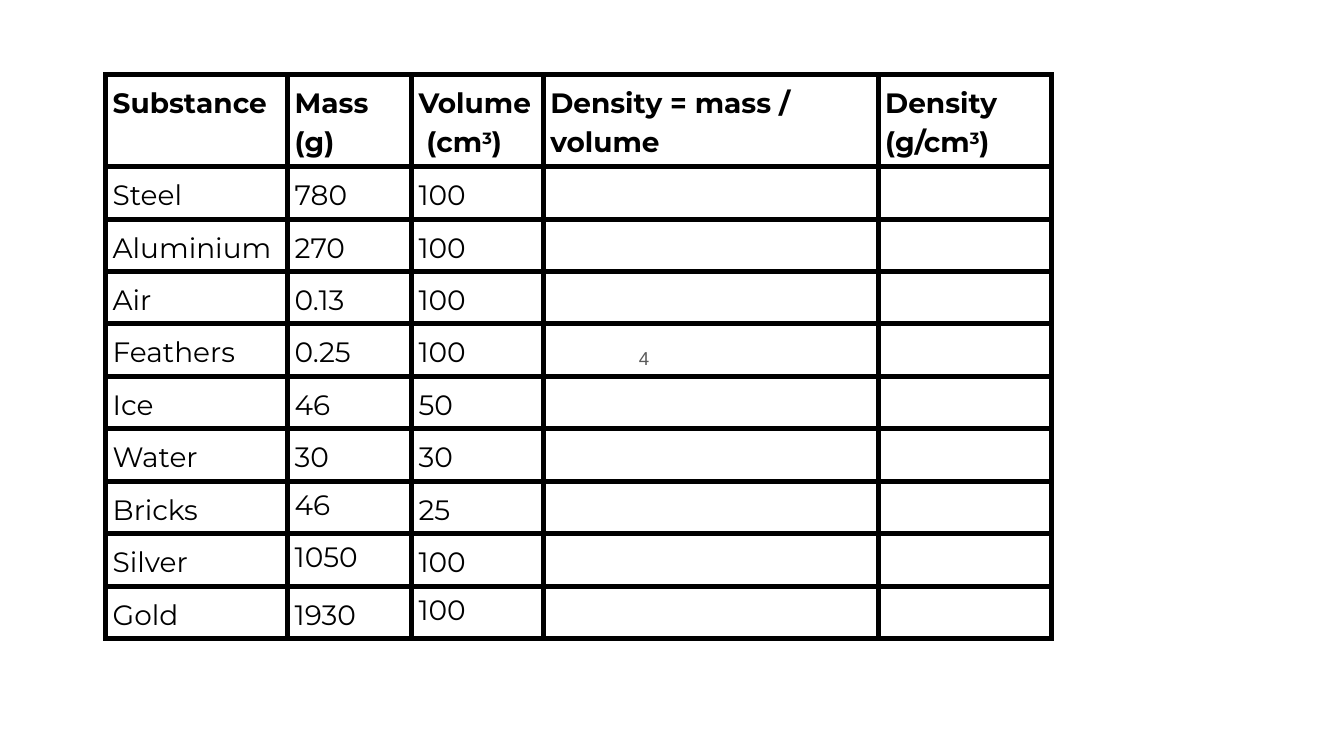
from dataclasses import dataclass

from lxml.etree import SubElement
from pptx import Presentation
from pptx.dml.color import RGBColor
from pptx.enum.text import MSO_ANCHOR, PP_ALIGN
from pptx.oxml.ns import qn
from pptx.util import Cm, Pt


@dataclass(frozen=True)
class Theme:
    """Colours, fonts and type sizes."""
    ink: str = "000000"
    grey: str = "595959"
    face: str = "Montserrat"
    plain: str = "Arial"
    body: int = 15
    small: int = 10
    rule: int = 3
    lead: float = 1.15
    pad: float = 0.13


class Sheet:
    """Holds the theme and the current slide."""

    def __init__(self, theme, slide):
        """Keep the theme and slide."""
        self.theme = theme
        self.slide = slide

    def run(self, para, text, face, size, ink, bold=False, raised=False):
        """Add one styled run."""
        run = para.add_run()
        run.text = text
        font = run.font
        font.name, font.size, font.bold = face, Pt(size), bold
        font.color.rgb = RGBColor.from_string(ink)
        if raised:
            run._r.get_or_add_rPr().set("baseline", "30000")

    def number(self, text, left, top, width, height):
        """Add the slide number."""
        box = self.slide.shapes.add_textbox(Cm(left), Cm(top), Cm(width), Cm(height))
        frame = box.text_frame
        frame.word_wrap = True
        frame.vertical_anchor = MSO_ANCHOR.MIDDLE
        frame.margin_left = frame.margin_right = Cm(0.25)
        frame.margin_top = frame.margin_bottom = Cm(0.25)
        para = frame.paragraphs[0]
        para.alignment = PP_ALIGN.RIGHT
        self.run(para, text, self.theme.plain, self.theme.small, self.theme.grey)

    def border(self, cell):
        """Rule all four sides of a cell."""
        props = cell._tc.get_or_add_tcPr()
        for side in ("a:lnL", "a:lnR", "a:lnT", "a:lnB"):
            line = SubElement(props, qn(side), w=str(Pt(self.theme.rule)))
            fill = SubElement(line, qn("a:solidFill"))
            SubElement(fill, qn("a:srgbClr"), val=self.theme.ink)

    def cell(self, cell, lines, bold, lead):
        """Fill a cell with lines made of text parts."""
        theme = self.theme
        cell.margin_left = cell.margin_right = Cm(theme.pad)
        cell.margin_top = cell.margin_bottom = Cm(theme.pad)
        self.border(cell)
        cell.fill.background()
        frame = cell.text_frame
        for i, parts in enumerate(lines):
            para = frame.add_paragraph() if i else frame.paragraphs[0]
            para.line_spacing = lead
            for j, part in enumerate(parts):
                self.run(para, part, theme.face, theme.body, theme.ink, bold, j == 1)
        if not lines:
            SubElement(frame.paragraphs[0]._p, qn("a:endParaRPr"), sz=str(theme.body * 50))

    def table(self, left, top, widths, heights, rows, tight):
        """Add a ruled table with a bold first row."""
        frame = self.slide.shapes.add_table(
            len(rows), len(widths), Cm(left), Cm(top), Cm(sum(widths)), Cm(sum(heights)))
        table = frame.table
        table.first_row = table.horz_banding = False
        for col, width in zip(table.columns, widths):
            col.width = Cm(width)
        for y, (row, height) in enumerate(zip(rows, heights)):
            table.rows[y].height = Cm(height)
            for x, lines in enumerate(row):
                lead = 1.0 if (y, x) in tight else self.theme.lead
                self.cell(table.cell(y, x), lines, y == 0, lead)


HEAD = [
    [["Substance"]],
    [["Mass (g)"]],
    [["Volume  (cm", "3", ")"]],
    [["Density = mass / volume"]],
    [["Density"], ["(g/cm", "3", ")"]],
]
DATA = [
    ("Steel", "780", "100"),
    ("Aluminium", "270", "100"),
    ("Air", "0.13", "100"),
    ("Feathers", "0.25", "100"),
    ("Ice", "46", "50"),
    ("Water", "30", "30"),
    ("Bricks", "46", "25"),
    ("Silver", "1050", "100"),
    ("Gold", "1930", "100"),
]
TIGHT = {(7, 1), (8, 1), (9, 2)}


def main():
    """Build and save the slide."""
    deck = Presentation()
    deck.slide_width, deck.slide_height = Cm(25.4), Cm(14.29)
    sheet = Sheet(Theme(), deck.slides.add_slide(deck.slide_layouts[6]))
    sheet.number("4", 11.76, 6.48, 0.76, 0.56)
    rows = [HEAD] + [[[[text]] for text in row] + [[], []] for row in DATA]
    widths = [3.44, 2.34, 2.49, 6.33, 3.27]
    heights = [1.74] + [0.99] * len(DATA)
    sheet.table(2, 1.41, widths, heights, rows, TIGHT)
    deck.save("out.pptx")


if __name__ == "__main__":
    main()
